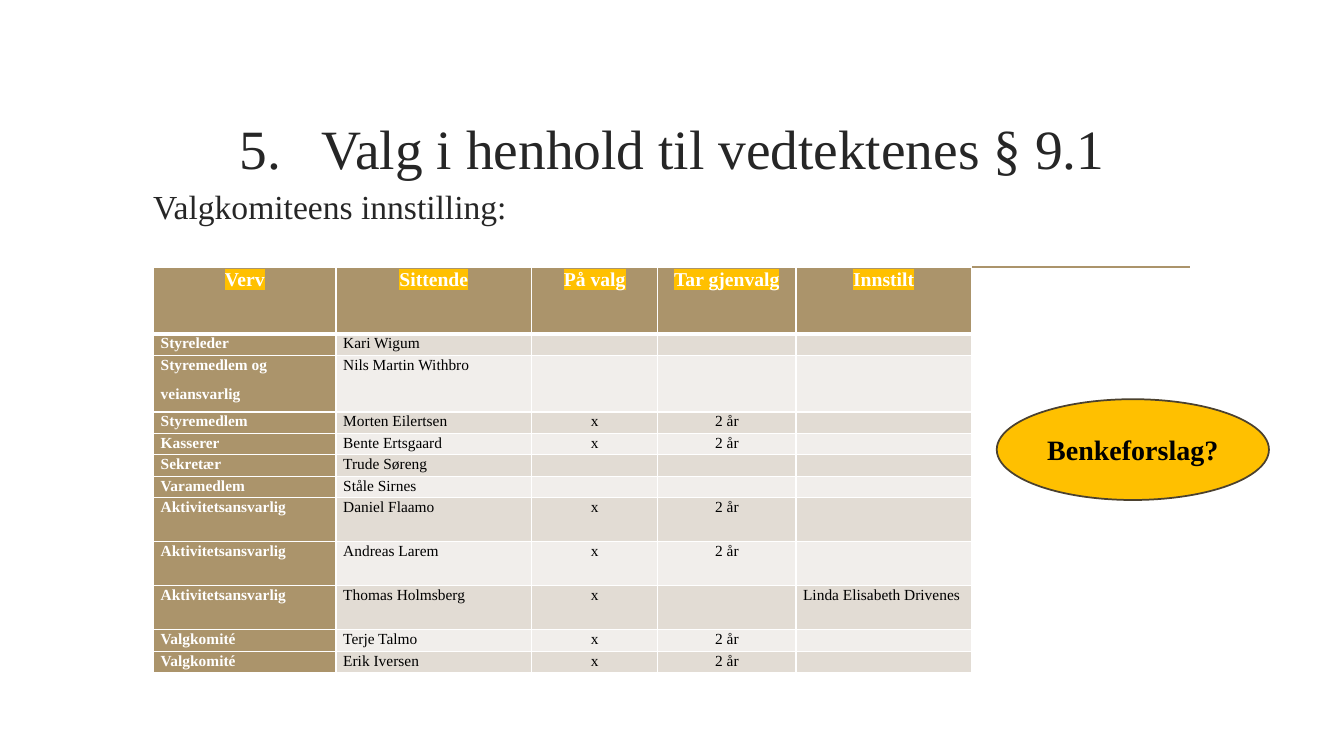
from lxml.etree import SubElement
from pptx import Presentation
from pptx.dml.color import RGBColor
from pptx.enum.shapes import MSO_CONNECTOR, MSO_SHAPE
from pptx.enum.text import MSO_ANCHOR, MSO_AUTO_SIZE, PP_ALIGN
from pptx.oxml.ns import qn
from pptx.util import Cm, Pt

FONT = "Times New Roman"
TAN, GOLD, DARK, WHITE, BLACK = "AB946B", "FFC000", "262626", "FFFFFF", "000000"
BANDS = ("E2DCD4", "F1EEEB")
COL_WIDTHS = (4.6, 4.93, 3.18, 3.48, 4.42)
LOW, TALL = 0.54, 1.11
ROW_HEIGHTS = (1.68, LOW, 1.43, *[LOW] * 4, *[TALL] * 3, LOW, LOW)
ROWS = (
    ("Verv", "Sittende", "På valg", "Tar gjenvalg", "Innstilt"),
    ("Styreleder", "Kari Wigum", "", "", ""),
    ("Styremedlem og\nveiansvarlig", "Nils Martin Withbro", "", "", ""),
    ("Styremedlem", "Morten Eilertsen", "x", "2 år", ""),
    ("Kasserer", "Bente Ertsgaard", "x", "2 år", ""),
    ("Sekretær", "Trude Søreng", "", "", ""),
    ("Varamedlem", "Ståle Sirnes", "", "", ""),
    ("Aktivitetsansvarlig", "Daniel Flaamo", "x", "2 år", ""),
    ("Aktivitetsansvarlig", "Andreas Larem", "x", "2 år", ""),
    ("Aktivitetsansvarlig", "Thomas Holmsberg", "x", "", "Linda Elisabeth Drivenes"),
    ("Valgkomité", "Terje Talmo", "x", "2 år", ""),
    ("Valgkomité", "Erik Iversen", "x", "2 år", ""),
)


def rgb(color):
    return RGBColor.from_string(color)


def format_runs(p, size, color, bold=False):
    for r in p.runs:
        r.font.name = FONT
        r.font.size = Pt(size)
        r.font.bold = bold
        r.font.color.rgb = rgb(color)


def highlight(r, color):
    mark = SubElement(r.font._element, qn("a:highlight"))
    SubElement(mark, qn("a:srgbClr"), val=color)
    r.font._element.find(qn("a:solidFill")).addnext(mark)


def add_rule(s):
    line = s.shapes.add_connector(
        MSO_CONNECTOR.STRAIGHT, Cm(3.89), Cm(6.73), Cm(30), Cm(6.73))
    line.line.color.rgb = rgb(TAN)
    line.line.width = Pt(1.25)
    SubElement(line._element.spPr, qn("a:effectLst"))


def set_title(s, text, number):
    sp = s.shapes.title
    sp.left, sp.top, sp.width, sp.height = Cm(3.61), Cm(2.72), Cm(26.67), Cm(3.63)
    tf = sp.text_frame
    tf.text = text
    tf.word_wrap = True
    tf.auto_size = MSO_AUTO_SIZE.NONE
    tf.vertical_anchor = MSO_ANCHOR.MIDDLE
    tf.margin_bottom = Cm(1.77)
    p = tf.paragraphs[0]
    p.alignment = PP_ALIGN.CENTER
    pPr = p._p.get_or_add_pPr()
    pPr.set("marL", str(Cm(2.06)))
    pPr.set("indent", str(-Cm(2.06)))
    SubElement(pPr, qn("a:buFont"), typeface="+mj-lt")
    SubElement(pPr, qn("a:buAutoNum"), type="arabicPeriod", startAt=str(number))
    format_runs(p, 39.6, DARK)


def add_subtitle(s, text):
    sp = s.shapes.add_textbox(Cm(3.61), Cm(4.55), Cm(26.67), Cm(11.76))
    tf = sp.text_frame
    tf.text = text
    tf.word_wrap = True
    p = tf.paragraphs[0]
    p.space_after = Pt(6)
    format_runs(p, 24, DARK)


def set_border(cell, side, width):
    ln = SubElement(cell._tc.get_or_add_tcPr(), qn("a:" + side), w=str(Pt(width)))
    fill = SubElement(ln, qn("a:solidFill"))
    SubElement(fill, qn("a:srgbClr"), val=WHITE)


def fill_cell(cell, text, row, col):
    header, label = row == 0, col == 0
    cell.text_frame.text = text
    cell.margin_left = cell.margin_right = Cm(0.18)
    cell.margin_top = cell.margin_bottom = 0
    for side in ("lnL", "lnR", "lnT", "lnB"):
        thick = (row, side) in ((0, "lnB"), (1, "lnT"))
        set_border(cell, side, 3 if thick else 1)
    cell.fill.solid()
    cell.fill.fore_color.rgb = rgb(TAN if header or label else BANDS[(row - 1) % 2])
    for p in cell.text_frame.paragraphs:
        p.alignment = PP_ALIGN.CENTER if header or col in (2, 3) else PP_ALIGN.LEFT
        p.line_spacing = 1.07
        p.space_after = Pt(8)
        format_runs(p, 14 if header else 11,
                    WHITE if header or label else BLACK, header or label)
        if header:
            highlight(p.runs[0], GOLD)
        if not text:
            SubElement(p._p, qn("a:endParaRPr"), sz="1100")


def add_election_table(s):
    table = s.shapes.add_table(
        len(ROWS), len(COL_WIDTHS), Cm(3.87), Cm(6.73),
        Cm(sum(COL_WIDTHS)), Cm(sum(ROW_HEIGHTS))).table
    for column, width in zip(table.columns, COL_WIDTHS):
        column.width = Cm(width)
    for i, (texts, height) in enumerate(zip(ROWS, ROW_HEIGHTS)):
        table.rows[i].height = Cm(height)
        for j, text in enumerate(texts):
            fill_cell(table.cell(i, j), text, i, j)


def add_callout(s, text):
    sp = s.shapes.add_shape(MSO_SHAPE.OVAL, Cm(25.12), Cm(10.06), Cm(6.86), Cm(2.54))
    sp.shadow.inherit = False
    sp.fill.solid()
    sp.fill.fore_color.rgb = rgb(GOLD)
    sp.line.color.rgb = rgb("4B412F")
    sp.line.width = Pt(1.25)
    tf = sp.text_frame
    tf.text = text
    tf.vertical_anchor = MSO_ANCHOR.MIDDLE
    p = tf.paragraphs[0]
    p.alignment = PP_ALIGN.CENTER
    format_runs(p, 20, BLACK, True)


def main():
    prs = Presentation()
    prs.slide_width, prs.slide_height = Cm(33.87), Cm(19.05)
    s = prs.slides.add_slide(prs.slide_layouts[5])
    add_rule(s)
    set_title(s, "Valg i henhold til vedtektenes § 9.1", 5)
    add_subtitle(s, "Valgkomiteens innstilling:")
    add_election_table(s)
    add_callout(s, "Benkeforslag?")
    prs.save("out.pptx")


if __name__ == "__main__":
    main()
